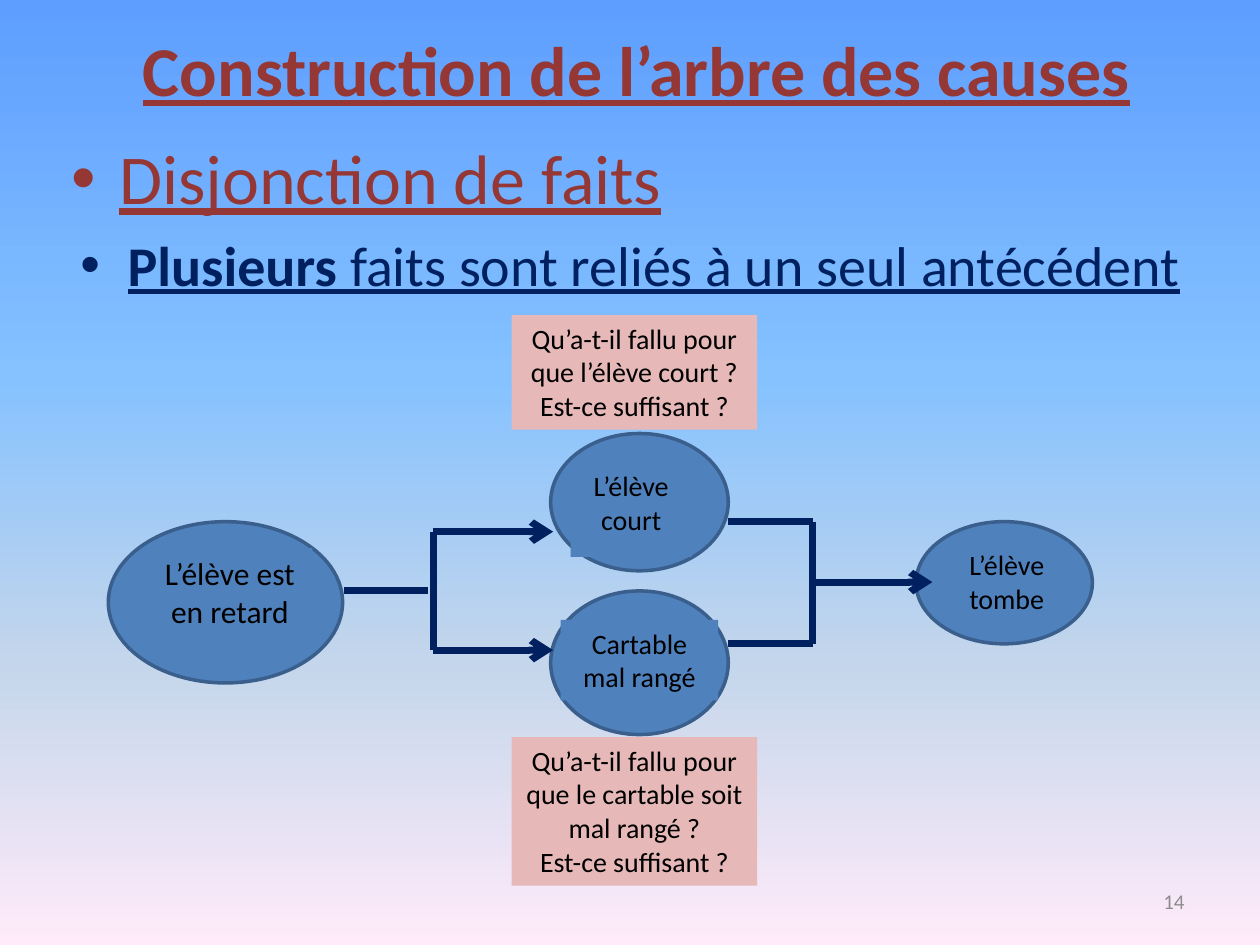
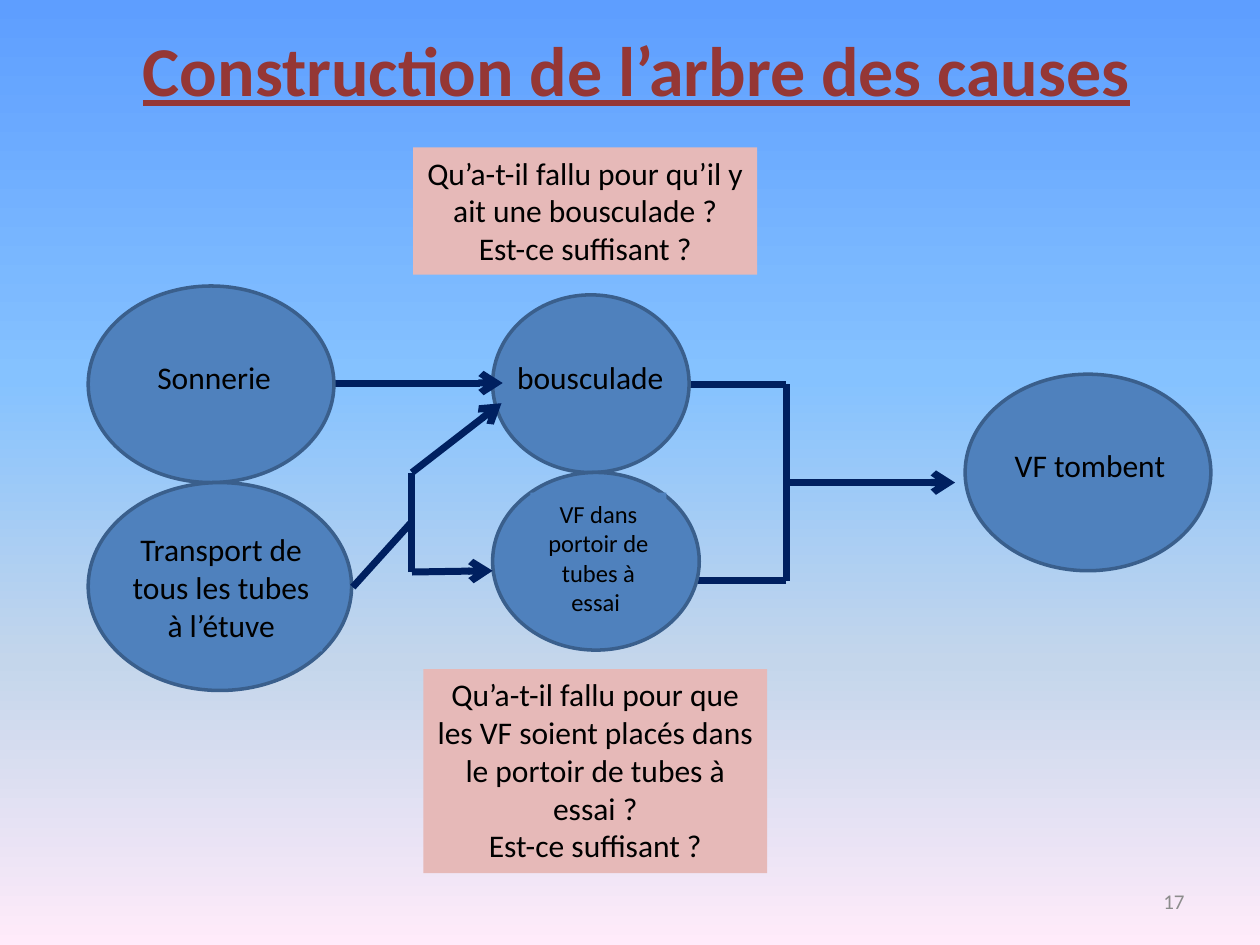
import itertools

import lxml.etree
import pptx
import pptx.dml.color
import pptx.enum.shapes
import pptx.enum.text
import pptx.oxml
import pptx.oxml.ns
import pptx.util

EMU_PER_PX = 9144  # 100 px to the inch
FONT = "Calibri"
COLORS = {
    "heading": "953735",
    "navy": "002060",
    "node": "4F81BD",
    "node_line": "3A5F8C",
    "question": "E6B9B8",
    "text": "000000",
    "number": "8C8C8C",
}
GRADIENT = [(0, "5E9EFF"), (40, "85C2FF"), (70, "C4D6EB"), (100, "FFEBFA")]
TITLE = "Construction de l’arbre des causes"
FOLLOW_UP = "Est-ce suffisant ?"
TITLE_AND_BODY, TITLE_ONLY = 1, 5
ALIGN = pptx.enum.text.PP_ALIGN
ANCHOR = pptx.enum.text.MSO_ANCHOR
QN = pptx.oxml.ns.qn


def px(length):
    return pptx.util.Emu(length * EMU_PER_PX)


def color(name):
    return pptx.dml.color.RGBColor.from_string(COLORS[name])


class Deck:
    def __init__(self, presentation):
        self.presentation = presentation
        self.slide = None
        self.paint_background()

    def paint_background(self):
        """Put the vertical four-stop gradient on the master."""
        fill = self.presentation.slide_master.background.fill
        fill.gradient()
        fill.gradient_angle = 270
        stops = fill.gradient_stops[0]._gs.getparent()
        for stop in list(stops):
            stops.remove(stop)
        for position, hex_color in GRADIENT:
            stop = lxml.etree.SubElement(stops, QN("a:gs"), pos=str(position * 1000))
            lxml.etree.SubElement(stop, QN("a:srgbClr"), val=hex_color)

    def new_slide(self, layout, number):
        layouts = self.presentation.slide_layouts
        self.slide = self.presentation.slides.add_slide(layouts[layout])
        title = self.slide.shapes.title
        self.place(title, (55, 0, 900, 108))
        paragraph = title.text_frame.paragraphs[0]
        paragraph.alignment = ALIGN.CENTER
        self.run(paragraph, TITLE, 40, "heading", bold=True, underline=True)
        self.page_number(number)

    def place(self, shape, box):
        shape.left, shape.top, shape.width, shape.height = map(px, box)

    def run(self, paragraph, text, size, color_name="text", bold=None, underline=None):
        run = paragraph.add_run()
        run.text = text
        font = run.font
        font.name, font.size = FONT, pptx.util.Pt(size)
        font.bold, font.underline = bold, underline
        font.color.rgb = color(color_name)

    def page_number(self, number):
        frame = self.slide.shapes.add_textbox(*map(px, (717, 695, 233, 40))).text_frame
        frame.word_wrap = True
        frame.vertical_anchor = ANCHOR.MIDDLE
        frame.paragraphs[0].alignment = ALIGN.RIGHT
        self.run(frame.paragraphs[0], str(number), 12, "number")

    def bullets(self, heading, strong, rest):
        body = self.slide.placeholders[1]
        self.place(body, (47, 102, 900, 648))
        first = body.text_frame.paragraphs[0]
        self.run(first, heading, 40, "heading", underline=True)
        second = body.text_frame.add_paragraph()
        second.alignment = ALIGN.RIGHT
        self.run(second, strong, 32, "navy", bold=True, underline=True)
        self.run(second, rest, 32, "navy", underline=True)

    def text_block(self, box, lines, size, fill):
        """Filled box that grows with its centred lines."""
        block = self.slide.shapes.add_textbox(*map(px, box))
        block.fill.solid()
        block.fill.fore_color.rgb = color(fill)
        frame = block.text_frame
        frame.word_wrap = True
        frame.auto_size = pptx.enum.text.MSO_AUTO_SIZE.SHAPE_TO_FIT_TEXT
        for index, line in enumerate(lines):
            paragraph = frame.add_paragraph() if index else frame.paragraphs[0]
            paragraph.alignment = ALIGN.CENTER
            self.run(paragraph, line, size)

    def question(self, box, text, size):
        self.text_block(box, [text, FOLLOW_UP], size, "question")

    def fact(self, ellipse_box, label_box, text, size):
        """Ellipse with its label laid over it."""
        ellipse = self.slide.shapes.add_shape(
            pptx.enum.shapes.MSO_SHAPE.OVAL, *map(px, ellipse_box))
        ellipse.shadow.inherit = False
        ellipse.fill.solid()
        ellipse.fill.fore_color.rgb = color("node")
        ellipse.line.color.rgb = color("node_line")
        ellipse.line.width = pptx.util.Pt(2)
        self.text_block(label_box, [text], size, "node")

    def route(self, *points, arrow=False):
        """Straight segments through the points, with an arrowhead on the last."""
        for start, end in itertools.pairwise(points):
            connector = self.slide.shapes.add_connector(
                pptx.enum.shapes.MSO_CONNECTOR.STRAIGHT, *map(px, start + end))
            connector.line.color.rgb = color("navy")
            connector.line.width = pptx.util.Pt(4)
            properties = connector._element.spPr
            lxml.etree.SubElement(properties, QN("a:effectLst"))
        if arrow:
            line = properties.find(QN("a:ln"))
            lxml.etree.SubElement(line, QN("a:tailEnd"), type="arrow")

    def join(self, left, trunk, top, bottom, tip):
        """Bracket that gathers two facts into one arrow."""
        middle = (top + bottom) // 2
        self.route((left, top), (trunk, top), (trunk, bottom), (left, bottom))
        self.route((trunk, middle), (tip, middle), arrow=True)


def build_disjunction(deck):
    deck.new_slide(TITLE_AND_BODY, 14)
    deck.bullets("Disjonction de faits", "Plusieurs",
                 " faits sont reliés à un seul antécédent")
    deck.fact((727, 414, 140, 97), (750, 430, 98, 64), "L’élève tombe", 16)
    deck.join(left=578, trunk=645, top=414, bottom=511, tip=740)
    deck.fact((437, 344, 141, 109), (453, 367, 96, 75), "L’élève court", 16)
    deck.fact((437, 469, 141, 114), (445, 492, 125, 64), "Cartable mal rangé", 16)
    deck.route((273, 469), (340, 469))
    for y in (422, 516):
        deck.route((344, 469), (344, y), (439, y), arrow=True)
    deck.question((406, 250, 195, 91), "Qu’a-t-il fallu pour que l’élève court ?", 16)
    deck.question((406, 585, 195, 118),
                  "Qu’a-t-il fallu pour que le cartable soit mal rangé ?", 16)
    deck.fact((86, 414, 186, 128), (117, 435, 131, 71), "L’élève est en retard", 18)


def build_test_tubes(deck):
    deck.new_slide(TITLE_ONLY, 17)
    deck.fact((766, 297, 195, 156), (781, 349, 168, 40), "VF tombent", 18)
    deck.join(left=531, trunk=624, top=305, bottom=461, tip=758)
    deck.fact((391, 234, 156, 141), (398, 279, 141, 40), "bousculade", 18)
    deck.fact((391, 375, 164, 141), (421, 391, 108, 104),
              "VF dans portoir de tubes à essai ", 14)
    deck.question((336, 531, 273, 162),
                  "Qu’a-t-il fallu pour que les VF soient placés dans "
                  "le portoir de tubes à essai ?", 18)
    deck.route((266, 304), (399, 304), arrow=True)
    deck.question((328, 117, 273, 101),
                  "Qu’a-t-il fallu pour qu’il y ait une bousculade ?", 18)
    deck.fact((70, 227, 195, 156), (86, 279, 168, 40), "Sonnerie", 18)
    deck.fact((70, 383, 209, 165), (95, 416, 161, 101),
              "Transport de tous les tubes à l’étuve", 18)
    deck.route((327, 454), (391, 453), arrow=True)
    deck.route((327, 454), (327, 375), (398, 320), arrow=True)
    deck.route((280, 466), (327, 414))


def main():
    presentation = pptx.Presentation()
    presentation.slide_width, presentation.slide_height = px(1000), px(750)
    deck = Deck(presentation)
    build_disjunction(deck)
    build_test_tubes(deck)
    presentation.save("out.pptx")


if __name__ == "__main__":
    main()
